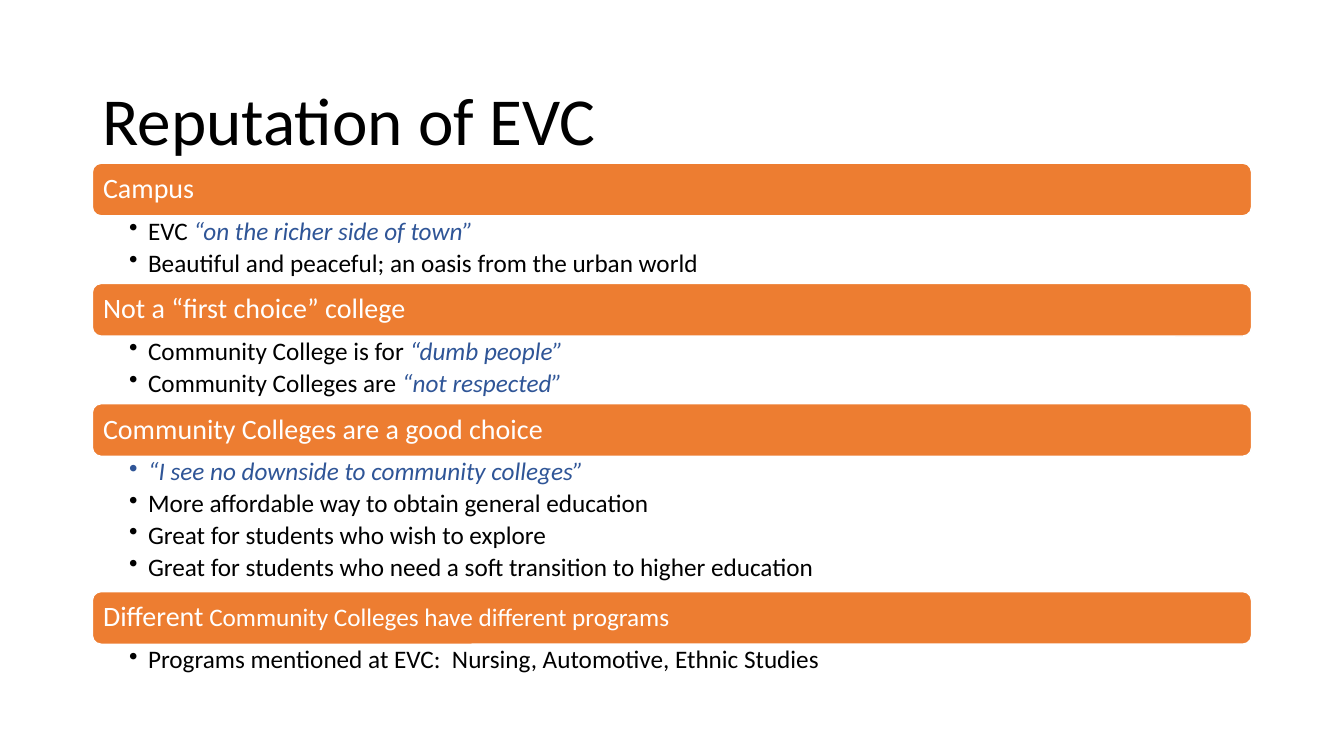
from lxml import etree
from pptx import Presentation
from pptx.dml.color import RGBColor
from pptx.enum.shapes import MSO_SHAPE
from pptx.enum.text import MSO_ANCHOR, MSO_AUTO_SIZE, PP_ALIGN
from pptx.oxml.ns import qn
from pptx.util import Pt

ROUNDED = MSO_SHAPE.ROUNDED_RECTANGLE
MIDDLE, TOP = MSO_ANCHOR.MIDDLE, MSO_ANCHOR.TOP
LEFT_ALIGN = PP_ALIGN.LEFT
NO_FIT = MSO_AUTO_SIZE.NONE

FONT = "Calibri"
BLACK, WHITE, ORANGE, BLUE = "000000", "FFFFFF", "ED7D31", "2F5597"
TITLE_SIZE, HEADING_SIZE, BULLET_SIZE = 48, 20, 18

TITLE = "Reputation of EVC"
# Each section: heading runs (text, size), then bullets made of (text, is_quote) runs
SECTIONS = [
    ([("Campus", HEADING_SIZE)], [
        [("EVC ", False), ("“on the richer side of town”", True)],
        [("Beautiful and peaceful; an oasis from the urban world", False)],
    ]),
    ([("Not a “first choice” college", HEADING_SIZE)], [
        [("Community College is for ", False), ("“dumb people”", True)],
        [("Community Colleges are ", False), ("“not respected”", True)],
    ]),
    ([("Community Colleges are a good choice", HEADING_SIZE)], [
        [("“I see no downside to community colleges”", True)],
        [("More affordable way to obtain general education", False)],
        [("Great for students who wish to explore", False)],
        [("Great for students who need a soft transition to higher education", False)],
    ]),
    ([("Different", HEADING_SIZE),
      (" Community Colleges have different programs", BULLET_SIZE)], [
        [("Programs mentioned at EVC:  Nursing, Automotive, Ethnic Studies", False)],
    ]),
]

LEFT, WIDTH = 66, 828
TITLE_TOP, TITLE_HEIGHT = 44, 89
FIRST_TOP, BAR_HEIGHT, BULLET_HEIGHT = 116.6, 37.6, 24.15
BULLET_INDENT = 13.5


def rgb(color):
    return RGBColor.from_string(color)


def set_frame(frame, anchor, insets):
    """Set wrapping, anchor and the left, top, right and bottom insets."""
    frame.word_wrap = True
    frame.auto_size = NO_FIT
    frame.vertical_anchor = anchor
    (frame.margin_left, frame.margin_top,
     frame.margin_right, frame.margin_bottom) = map(Pt, insets)


def set_paragraph(paragraph, space_after=0):
    paragraph.alignment = LEFT_ALIGN
    paragraph.line_spacing = 0.9
    paragraph.space_before = Pt(0)
    paragraph.space_after = Pt(space_after)


def add_run(paragraph, text, size, color, italic=False):
    run = paragraph.add_run()
    run.text = text
    run.font.name = FONT
    run.font.size = Pt(size)
    run.font.italic = italic
    run.font.color.rgb = rgb(color)


def add_bullet_mark(paragraph):
    properties = paragraph._p.get_or_add_pPr()
    properties.set("marL", str(Pt(BULLET_INDENT)))
    properties.set("indent", str(-Pt(BULLET_INDENT)))
    etree.SubElement(properties, qn("a:buChar")).set("char", "•")


def add_heading_bar(slide, top, heading):
    bar = slide.shapes.add_shape(ROUNDED, Pt(LEFT), Pt(top), Pt(WIDTH), Pt(BAR_HEIGHT))
    bar.shadow.inherit = False
    bar.fill.solid()
    bar.fill.fore_color.rgb = rgb(ORANGE)
    bar.line.color.rgb = rgb(WHITE)
    bar.line.width = Pt(1)
    set_frame(bar.text_frame, MIDDLE, (5.8, 5.8, 5.8, 5.8))
    paragraph = bar.text_frame.paragraphs[0]
    set_paragraph(paragraph)
    for text, size in heading:
        add_run(paragraph, text, size, WHITE)


def add_bullets(slide, top, height, bullets):
    box = slide.shapes.add_textbox(Pt(LEFT), Pt(top), Pt(WIDTH), Pt(height))
    frame = box.text_frame
    set_frame(frame, TOP, (26.3, 2, 10, 2))
    for index, bullet in enumerate(bullets):
        paragraph = frame.add_paragraph() if index else frame.paragraphs[0]
        paragraph.level = 1
        add_bullet_mark(paragraph)
        set_paragraph(paragraph, space_after=3.3)
        for text, is_quote in bullet:
            add_run(paragraph, text, BULLET_SIZE, BLUE if is_quote else BLACK, is_quote)


def main():
    deck = Presentation()
    deck.slide_width, deck.slide_height = Pt(960), Pt(540)
    slide = deck.slides.add_slide(deck.slide_layouts[5])

    title = slide.shapes.title
    title.left, title.top = Pt(LEFT), Pt(TITLE_TOP)
    title.width, title.height = Pt(WIDTH), Pt(TITLE_HEIGHT)
    set_frame(title.text_frame, MIDDLE, (7.2, 3.6, 7.2, 3.6))
    set_paragraph(title.text_frame.paragraphs[0])
    add_run(title.text_frame.paragraphs[0], TITLE, TITLE_SIZE, BLACK)

    top = FIRST_TOP
    for heading, bullets in SECTIONS:
        bullets_height = BULLET_HEIGHT * len(bullets)
        add_heading_bar(slide, top, heading)
        add_bullets(slide, top + BAR_HEIGHT, bullets_height, bullets)
        top += BAR_HEIGHT + bullets_height

    deck.save("out.pptx")


if __name__ == "__main__":
    main()
